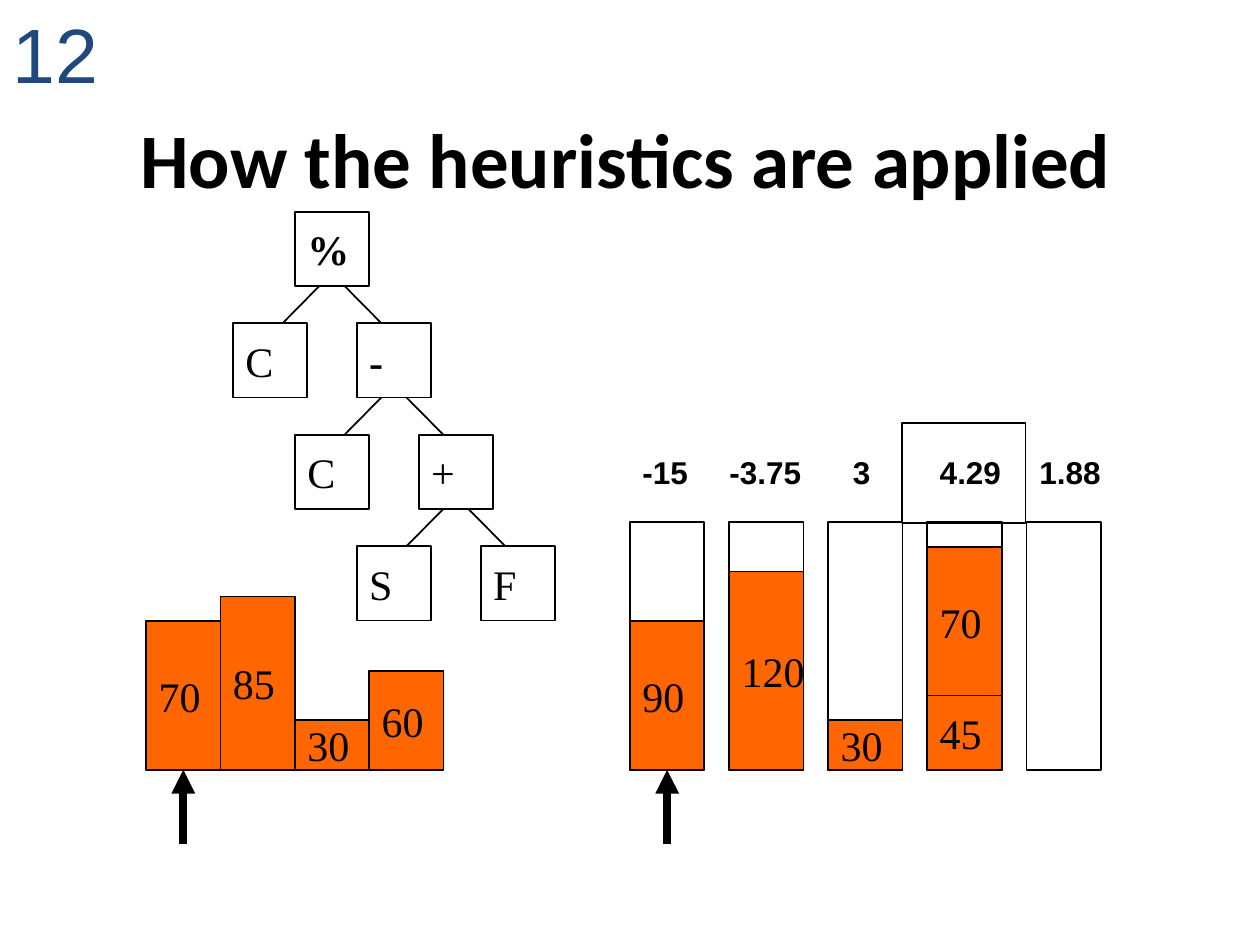
from typing import NamedTuple, Optional

from lxml import etree
from pptx import Presentation
from pptx.dml.color import RGBColor
from pptx.enum import shapes, text
from pptx.oxml import ns
from pptx.util import Inches, Pt

BLACK = RGBColor(0x00, 0x00, 0x00)
WHITE = RGBColor(0xFF, 0xFF, 0xFF)
ORANGE = RGBColor(0xFF, 0x66, 0x00)
NAVY = RGBColor(0x1F, 0x49, 0x7D)

SIDE = 0.59
UNIT = SIDE / 3
FLOOR = 6.11
TUBE = 10 * UNIT
BINS = 5.0
PITCH = 4 * UNIT
ITEMS = 1.16
ROOT = (2.34, 1.68)
SHIFT = 2.5 * UNIT
DROP = 1.5 * SIDE
INSET = 0.1


class Bar(NamedTuple):
    label: str
    size: int


class Bin(NamedTuple):
    score: str
    left: float
    width: float
    bars: tuple[Bar, ...]


class Node(NamedTuple):
    label: str
    bold: bool = False
    kids: tuple["Node", ...] = ()


QUEUE = (Bar("70", 6), Bar("85", 7), Bar("30", 2), Bar("60", 4))
STACKS = (
    Bin("-15", 5.0, 0.58, (Bar("90", 6),)),
    Bin("-3.75", 5.69, 0.8, (Bar("120", 8),)),
    Bin("3", 6.67, 0.36, (Bar("30", 2),)),
    Bin("4.29", 7.36, 0.72, (Bar("45", 3), Bar("70", 6))),
    Bin("1.88", 8.15, 0.72, ()),
)
TREE = Node("%", True, (
    Node("C"),
    Node("-", True, (
        Node("C"),
        Node("+", kids=(Node("S"), Node("F"))),
    )),
))

deck = Presentation()
deck.slide_width, deck.slide_height = Inches(10), Inches(7.5)
slide = deck.slides.add_slide(deck.slide_layouts[6])


def write(shape, words: str, *, size: int = 24, font: str = "Times New Roman",
          color: RGBColor = BLACK, bold: bool = False, wrap: bool = False,
          align=text.PP_ALIGN.LEFT, anchor=text.MSO_ANCHOR.MIDDLE) -> None:
    frame = shape.text_frame
    frame.word_wrap = wrap
    frame.vertical_anchor = anchor
    para = frame.paragraphs[0]
    para.alignment = align
    run = para.add_run()
    run.text = words
    run.font.size, run.font.name, run.font.bold = Pt(size), font, bold
    run.font.color.rgb = color


def label(left: float, top: float, width: float, height: float,
          words: str, **style) -> None:
    box = slide.shapes.add_textbox(
        Inches(left), Inches(top), Inches(width), Inches(height))
    write(box, words, **style)


def block(left: float, top: float, width: float, height: float,
          fill: Optional[RGBColor] = WHITE, words: str = "",
          bold: bool = False) -> None:
    box = slide.shapes.add_shape(
        shapes.MSO_SHAPE.RECTANGLE,
        Inches(left), Inches(top), Inches(width), Inches(height))
    box.shadow.inherit = False
    if fill is None:
        box.fill.background()
    else:
        box.fill.solid()
        box.fill.fore_color.rgb = fill
    box.line.color.rgb, box.line.width = BLACK, Pt(1)
    if words:
        write(box, words, bold=bold)


def link(start: tuple[float, float], end: tuple[float, float],
         width: float = 1, arrow: bool = False) -> None:
    line = slide.shapes.add_connector(
        shapes.MSO_CONNECTOR.STRAIGHT, *map(Inches, start + end))
    line.line.color.rgb, line.line.width = BLACK, Pt(width)
    if arrow:
        etree.SubElement(line.line._get_or_add_ln(),
                         ns.qn("a:tailEnd"), type="triangle")
    etree.SubElement(line._element.spPr, ns.qn("a:effectLst"))


def stack(left: float, bars: tuple[Bar, ...]) -> None:
    base = FLOOR
    for bar in bars:
        tall = bar.size * UNIT
        base -= tall
        block(left, base, SIDE, tall, ORANGE, bar.label)


def point(left: float) -> None:
    mid = left + SIDE / 2
    link((mid, FLOOR + SIDE), (mid, FLOOR), 4.5, True)


def grow(node: Node, left: float, top: float) -> None:
    block(left, top, SIDE, SIDE, WHITE, node.label, node.bold)
    mid = left + SIDE / 2
    for kid, side in zip(node.kids, (-1, 1)):
        link((mid + side * INSET, top + SIDE),
             (mid + side * (SHIFT - INSET), top + DROP))
        grow(kid, left + side * SHIFT, top + DROP)


label(0.47, 0.5, 9, 1.5, "How the heuristics are applied", size=44,
      font="Calibri", bold=True, wrap=True, align=text.PP_ALIGN.CENTER)

for i, bin in enumerate(STACKS):
    left = BINS + i * PITCH
    block(left, FLOOR - TUBE, SIDE, TUBE)
    stack(left, bin.bars)
    label(bin.left, 3.55, bin.width, 0.4, bin.score, size=18, font="Arial",
          bold=True, anchor=text.MSO_ANCHOR.TOP)

for i, bar in enumerate(QUEUE):
    stack(ITEMS + i * SIDE, (bar,))

for left in (ITEMS, BINS):
    point(left)

grow(TREE, *ROOT)
block(7.16, 3.36, 0.98, 0.79, None)
label(0, 0, 1, 0.86, "12", size=44, font="Arial", color=NAVY, wrap=True,
      anchor=text.MSO_ANCHOR.TOP)

deck.save("out.pptx")
